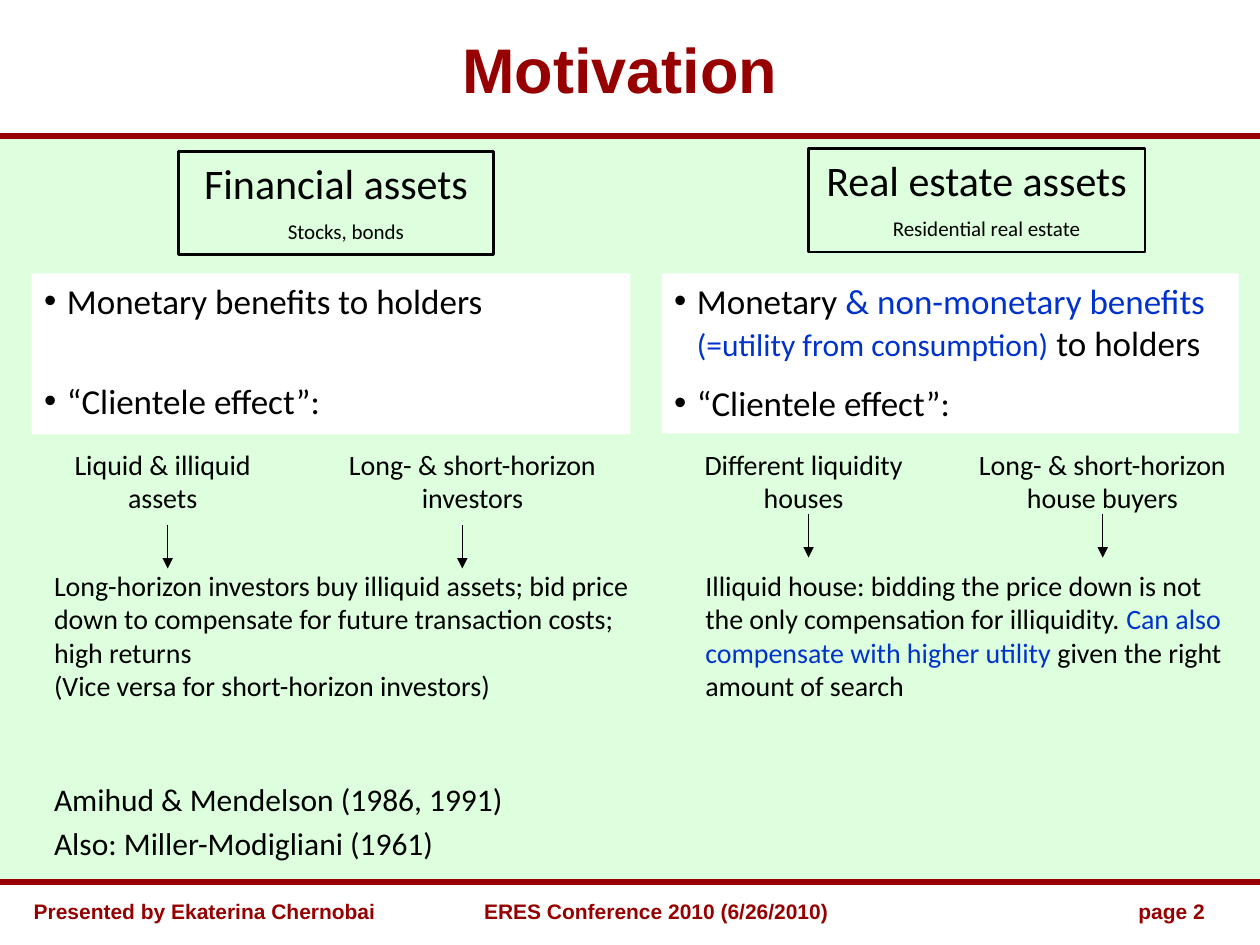
"""Build the Motivation slide comparing financial and real estate assets."""
from dataclasses import dataclass

from lxml.etree import SubElement
from pptx import Presentation
from pptx.dml.color import RGBColor as Rgb
from pptx.enum.shapes import MSO_CONNECTOR as Connector, MSO_SHAPE as Preset
from pptx.enum.text import MSO_ANCHOR as Anchor, PP_ALIGN as Align
from pptx.oxml.ns import qn
from pptx.util import Cm, Pt


@dataclass(frozen=True)
class Theme:
    red: Rgb = Rgb.from_string("960000")
    green: Rgb = Rgb.from_string("DDFFDD")
    blue: Rgb = Rgb.from_string("0033CC")
    black: Rgb = Rgb.from_string("000000")
    white: Rgb = Rgb.from_string("FFFFFF")
    head_font: str = "Arial"
    body_font: str = "Calibri"
    title: int = 36
    heading: int = 24
    bullet: int = 20
    reference: int = 18
    body: int = 16
    small: int = 12


class SlideBuilder:
    def __init__(self, slide, theme):
        self.slide, self.theme = slide, theme

    def set_text(self, shape, paras, size, align=Align.LEFT, anchor=Anchor.TOP, gap=0,
                 line_spacing=None, **font):
        frame = shape.text_frame
        frame.word_wrap, frame.vertical_anchor = True, anchor
        for index, spans in enumerate(paras):
            para = frame.paragraphs[0] if index == 0 else frame.add_paragraph()
            layout = {"alignment": align, "line_spacing": line_spacing,
                      "space_before": Pt(gap if index else 0)}
            for name, value in layout.items():
                setattr(para, name, value)
            for text, changes in [(spans, {})] if isinstance(spans, str) else spans:
                span = para.add_run()
                span.text = text
                style = {"name": self.theme.body_font, "size": size,
                         "color": self.theme.black, **font, **changes}
                span.font.color.rgb = style.pop("color")
                style["size"] = Pt(style["size"])
                for name, value in style.items():
                    setattr(span.font, name, value)
        return frame

    def text(self, box, paras, size, **style):
        shape = self.slide.shapes.add_textbox(*map(Cm, box))
        return self.set_text(shape, paras, size, **style)

    def banner(self, box, words, size, align=Align.LEFT, anchor=Anchor.TOP):
        self.text(box, [words], size, align=align, anchor=anchor, bold=True,
                  name=self.theme.head_font, color=self.theme.red)

    def rect(self, box, fill=None, outline=None):
        shape = self.slide.shapes.add_shape(Preset.RECTANGLE, *map(Cm, box))
        shape.shadow.inherit = False
        if fill is None:
            shape.fill.background()
        else:
            shape.fill.solid()
            shape.fill.fore_color.rgb = fill
        if outline is None:
            shape.line.fill.background()
        else:
            shape.line.color.rgb, shape.line.width = outline, Pt(1.5)
        return shape

    def line(self, start, end, color, width, arrow=False):
        line = self.slide.shapes.add_connector(
            Connector.STRAIGHT, *map(Cm, (*start, *end)))
        line.line.color.rgb, line.line.width = color, Pt(width)
        props = line.element.spPr
        if arrow:
            SubElement(props.find(qn("a:ln")), qn("a:tailEnd"), type="triangle")
        SubElement(props, qn("a:effectLst"))

    def heading(self, box, title, subtitle):
        theme = self.theme
        frame = self.set_text(self.rect(box, outline=theme.black),
                              [title, [(subtitle, {"size": theme.small})]],
                              theme.heading, align=Align.CENTER, gap=6)
        frame.paragraphs[1]._p.get_or_add_pPr().set("marL", str(Cm(0.4)))

    def bullets(self, box, paras, gap):
        frame = self.set_text(self.rect(box, fill=self.theme.white), paras,
                              self.theme.bullet, gap=gap)
        indent = Cm(0.46)
        for para in frame.paragraphs:
            props = para._p.get_or_add_pPr()
            props.set("marL", str(indent))
            props.set("indent", str(-indent))
            SubElement(props, qn("a:buFont"), typeface="Arial")
            SubElement(props, qn("a:buChar"), char="•")

    def column(self, heading, bullets, labels, arrows, outcome):
        theme = self.theme
        self.heading(*heading)
        self.bullets(*bullets)
        for left, width, words in labels:
            self.text((left, 8.89, width, 1.63), [words], theme.body, align=Align.CENTER)
        top, *places = arrows
        for left in places:
            self.line((left, top), (left, top + 0.87), theme.black, 0.75, arrow=True)
        self.text(*outcome, theme.body)


def main():
    theme = Theme()
    deck = Presentation()
    deck.slide_width, deck.slide_height = Cm(25.4), Cm(19.05)
    page = SlideBuilder(deck.slides.add_slide(deck.slide_layouts[6]), theme)
    blue = {"color": theme.blue}

    page.rect((0, 2.74, 25.4, 15.04), fill=theme.green)
    for top in (17.78, 2.74):
        page.line((0, top), (25.4, top), theme.red, 3)
    page.banner((0.43, 0.43, 24.13, 1.9), "Motivation", theme.title,
                Align.CENTER, Anchor.MIDDLE)

    page.column(
        heading=((3.6, 3.05, 6.35, 2.08), "Financial assets", "Stocks, bonds"),
        bullets=((0.64, 5.51, 12.07, 3.25),
                 ["Monetary benefits to holders", "“Clientele effect”:"], 33),
        labels=[(0.84, 4.88, "Liquid & illiquid assets"),
                (6.35, 6.35, "Long- & short-horizon investors")],
        arrows=(10.59, 3.38, 9.32),
        outcome=((0.84, 11.33, 12.27, 2.97),
                 ["Long-horizon investors buy illiquid assets; bid price down to "
                  "compensate for future transaction costs; high returns",
                  "(Vice versa for short-horizon investors)"]))
    page.column(
        heading=((16.3, 3, 6.78, 2.08), "Real estate assets", "Residential real estate"),
        bullets=((13.34, 5.51, 11.63, 3.23),
                 [[("Monetary ", {}), ("& non-monetary benefits ", blue),
                   ("(=utility from consumption)", {**blue, "size": theme.reference}),
                   (" to holders", {})], "“Clientele effect”:"], 10),
        labels=[(13.76, 4.88, "Different liquidity houses"),
                (19.05, 6.35, "Long- & short-horizon house buyers")],
        arrows=(10.37, 16.3, 22.23),
        outcome=((13.97, 11.33, 11, 2.97),
                 [[("Illiquid house: bidding the price down is not the only "
                    "compensation for illiquidity. ", {}),
                   ("Can also compensate with higher utility", blue),
                   (" given the right amount of search", {})]]))

    page.text((0.84, 15.77, 12.07, 1.78),
              ["Amihud & Mendelson (1986, 1991)", "Also: Miller-Modigliani (1961)"],
              theme.reference, gap=9, line_spacing=0.75)
    page.banner((0.43, 17.98, 8.05, 0.64), "Presented by Ekaterina Chernobai", theme.small)
    page.banner((8.15, 17.98, 10.16, 1.07), "ERES Conference 2010 (6/26/2010)",
                theme.small, Align.CENTER)
    page.banner((19.89, 17.98, 4.65, 0.69), "page 2", theme.small, Align.RIGHT)
    deck.save("out.pptx")


if __name__ == "__main__":
    main()
